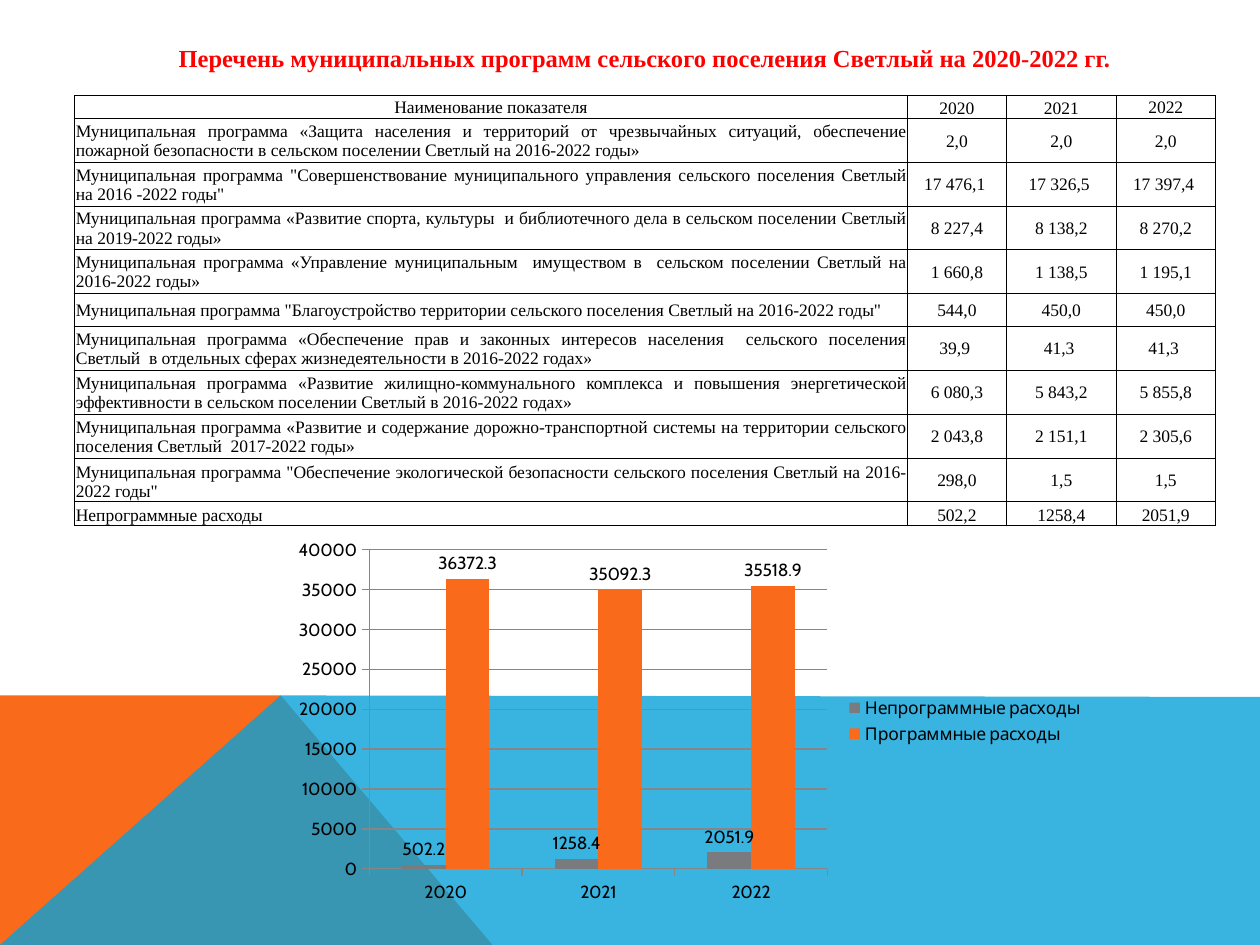
from typing import NamedTuple

from lxml import etree
from pptx import Presentation
from pptx import util as u
from pptx.chart import data as chart_data
from pptx.dml.color import RGBColor
from pptx.enum import chart as chart_enum
from pptx.enum import text
from pptx.oxml import ns

COLORS = {
    "orange": "F96A1B",
    "blue": "08A1D9",
    "red": "FF0000",
    "black": "000000",
    "gray": "797B7E",
    "grid": "868686",
}
SERIF = "Times New Roman"
CHART_FONT = "Cabin"
YEARS = ("2020", "2021", "2022")
COLUMN_WIDTHS = (16.79, 2, 2.21, 2)
MIDDLE = text.MSO_ANCHOR.MIDDLE
BOTTOM = text.MSO_ANCHOR.BOTTOM
CENTER = text.PP_ALIGN.CENTER
JUSTIFY = text.PP_ALIGN.JUSTIFY


class Band(NamedTuple):
    points: tuple[tuple[float, float], ...]
    color: str
    opacity: int = 100


class Row(NamedTuple):
    name: str
    values: tuple[str, str, str]
    height: float = 0.87
    name_anchor: text.MSO_ANCHOR = MIDDLE
    value_anchors: tuple[text.MSO_ANCHOR, ...] = (MIDDLE,) * 3
    name_align: text.PP_ALIGN = JUSTIFY
    left_border: float = 1


class Series(NamedTuple):
    name: str
    values: tuple[float, ...]
    color: str


BANDS = (
    Band(((0, 19.05), (0, 14.02), (5.66, 14.02), (9.93, 19.05)), "orange"),
    Band(((0, 19.05), (5.66, 14.02), (25.4, 14.05), (25.4, 19.05)), "blue", 80),
)
ROWS = (
    Row("Наименование показателя", YEARS, 0.45, MIDDLE, (BOTTOM, BOTTOM, MIDDLE), CENTER, 0.5),
    Row("Муниципальная программа «Защита населения и территорий от чрезвычайных ситуаций, "
        "обеспечение пожарной безопасности в сельском поселении Светлый на 2016-2022 годы»",
        ("2,0", "2,0", "2,0"), 0.89),
    Row('Муниципальная программа "Совершенствование муниципального управления сельского '
        'поселения Светлый на 2016 -2022 годы"',
        ("17 476,1 ", "17 326,5 ", "17 397,4 ")),
    Row("Муниципальная программа «Развитие спорта, культуры  и библиотечного дела в сельском "
        "поселении Светлый на 2019-2022 годы»",
        ("8 227,4", "8 138,2", "8 270,2"), 0.85),
    Row("Муниципальная программа «Управление муниципальным  имуществом в  сельском "
        "поселении Светлый на 2016-2022 годы»",
        ("1 660,8", "1 138,5", "1 195,1")),
    Row('Муниципальная программа "Благоустройство территории сельского поселения Светлый '
        'на 2016-2022 годы"',
        ("544,0", "450,0", "450,0"), 0.66),
    Row("Муниципальная программа «Обеспечение прав и законных интересов населения  сельского "
        "поселения Светлый  в отдельных сферах жизнедеятельности в 2016-2022 годах»",
        ("39,9 ", "41,3 ", "41,3 "), 0.89),
    Row("Муниципальная программа «Развитие жилищно-коммунального комплекса и повышения "
        "энергетической эффективности в сельском поселении Светлый в 2016-2022 годах»",
        ("6 080,3", "5 843,2", "5 855,8"), 0.89),
    Row("Муниципальная программа «Развитие и содержание дорожно-транспортной системы на "
        "территории сельского поселения Светлый  2017-2022 годы»",
        ("2 043,8", "2 151,1", "2 305,6")),
    Row('Муниципальная программа "Обеспечение экологической безопасности сельского '
        'поселения Светлый на 2016-2022 годы"',
        ("298,0", "1,5", "1,5"), name_anchor=BOTTOM, left_border=0.5),
    Row("Непрограммные расходы", ("502,2", "1258,4", "2051,9"), 0.48,
        BOTTOM, (BOTTOM,) * 3, left_border=0.5),
)
SERIES = (
    Series("Непрограммные расходы", (502.2, 1258.4, 2051.9), "gray"),
    Series("Программные расходы", (36372.3, 35092.3, 35518.9), "orange"),
)


def rgb(name: str) -> RGBColor:
    return RGBColor.from_string(COLORS[name])


def style_font(font, name: str, size: float, color: str, bold: bool = False) -> None:
    font.name = name
    font.size = u.Pt(size)
    font.bold = bold
    font.color.rgb = rgb(color)


def draw_band(slide, band: Band) -> None:
    start, *others = [(u.Cm(x), u.Cm(y)) for x, y in band.points]
    builder = slide.shapes.build_freeform(*start)
    builder.add_line_segments(others, close=True)
    shape = builder.convert_to_shape()
    shape.shadow.inherit = False
    shape.line.fill.background()
    shape.fill.solid()
    shape.fill.fore_color.rgb = rgb(band.color)
    if band.opacity < 100:
        color = shape.fill._xPr.find(".//" + ns.qn("a:srgbClr"))
        etree.SubElement(color, ns.qn("a:alpha"), val=str(band.opacity * 1000))


def draw_title(slide, title: str) -> None:
    shape = slide.shapes.add_textbox(u.Cm(2.11), u.Cm(0.74), u.Cm(21.79), u.Cm(0.86))
    shape.text_frame.word_wrap = True
    paragraph = shape.text_frame.paragraphs[0]
    paragraph.text = title
    paragraph.alignment = CENTER
    style_font(paragraph.font, SERIF, 14, "red", True)


def set_borders(cell, left_width: float) -> None:
    properties = cell._tc.get_or_add_tcPr()
    for side, width in (("L", left_width), ("R", 0.5), ("T", 0.5), ("B", 0.5)):
        line = etree.SubElement(properties, ns.qn(f"a:ln{side}"), w=str(u.Pt(width)))
        fill = etree.SubElement(line, ns.qn("a:solidFill"))
        etree.SubElement(fill, ns.qn("a:srgbClr"), val=COLORS["black"])


def fill_cell(cell, content: str, align, anchor, left_border: float) -> None:
    cell.margin_left = cell.margin_right = cell.margin_top = u.Cm(0.03)
    cell.margin_bottom = 0
    cell.vertical_anchor = anchor
    paragraph = cell.text_frame.paragraphs[0]
    paragraph.text = content
    paragraph.alignment = align
    style_font(paragraph.font, SERIF, 10, "black")
    set_borders(cell, left_border)
    cell.fill.background()


def draw_table(slide, rows: tuple[Row, ...]) -> None:
    height = sum(row.height for row in rows)
    table = slide.shapes.add_table(
        len(rows), len(COLUMN_WIDTHS), u.Cm(1.5), u.Cm(1.93), u.Cm(sum(COLUMN_WIDTHS)), u.Cm(height)
    ).table
    table.first_row = table.horz_banding = False
    for column, width in zip(table.columns, COLUMN_WIDTHS):
        column.width = u.Cm(width)
    for index, row in enumerate(rows):
        table.rows[index].height = u.Cm(row.height)
        fill_cell(table.cell(index, 0), row.name, row.name_align, row.name_anchor, row.left_border)
        for column, (value, anchor) in enumerate(zip(row.values, row.value_anchors), 1):
            fill_cell(table.cell(index, column), value, CENTER, anchor, 0.5)


def draw_chart(slide, series_list: tuple[Series, ...]) -> None:
    data = chart_data.CategoryChartData()
    data.categories = YEARS
    for series in series_list:
        data.add_series(series.name, series.values)
    chart = slide.shapes.add_chart(
        chart_enum.XL_CHART_TYPE.COLUMN_CLUSTERED,
        u.Cm(5.69), u.Cm(10.72), u.Cm(16.41), u.Cm(7.62), data,
    ).chart
    style_font(chart.font, CHART_FONT, 10, "black")
    chart.has_title = False
    chart.has_legend = True
    chart.legend.position = chart_enum.XL_LEGEND_POSITION.RIGHT
    chart.legend.include_in_layout = False
    for axis in (chart.category_axis, chart.value_axis):
        axis.major_tick_mark = chart_enum.XL_TICK_MARK.OUTSIDE
        axis.format.line.color.rgb = rgb("grid")
    chart.value_axis.has_major_gridlines = True
    chart.value_axis.major_gridlines.format.line.color.rgb = rgb("grid")
    plot = chart.plots[0]
    plot.gap_width = 150
    plot.vary_by_categories = False
    for bars, series in zip(plot.series, series_list):
        bars.format.fill.solid()
        bars.format.fill.fore_color.rgb = rgb(series.color)
        bars.data_labels.show_value = True
        bars.data_labels.position = chart_enum.XL_LABEL_POSITION.OUTSIDE_END


def main() -> None:
    presentation = Presentation()
    presentation.slide_width = u.Cm(25.4)
    presentation.slide_height = u.Cm(19.05)
    slide = presentation.slides.add_slide(presentation.slide_layouts[6])
    for band in BANDS:
        draw_band(slide, band)
    draw_title(slide, "Перечень муниципальных программ сельского поселения Светлый на 2020-2022 гг.")
    draw_table(slide, ROWS)
    draw_chart(slide, SERIES)
    presentation.save("out.pptx")


if __name__ == "__main__":
    main()
